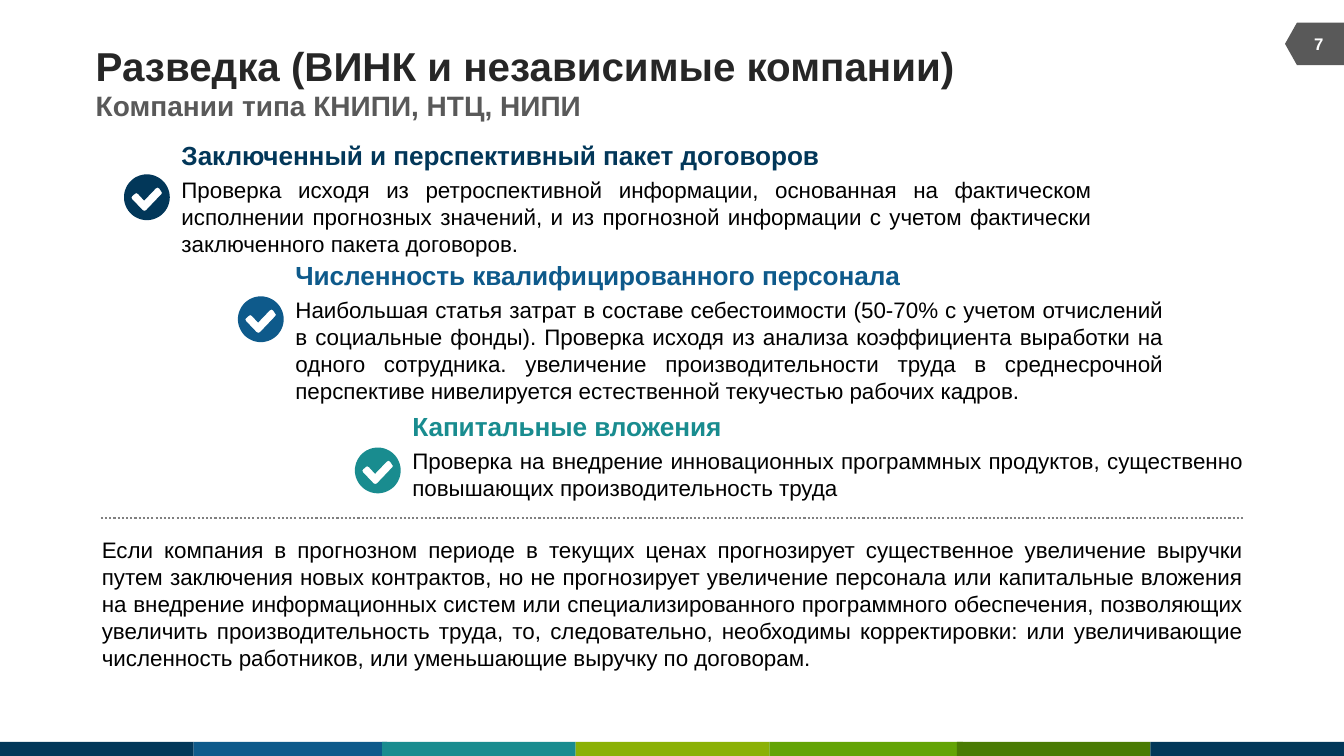
from math import cos, pi, sin

from lxml.etree import SubElement
from pptx import Presentation
from pptx.dml.color import RGBColor
from pptx.enum.dml import MSO_LINE
from pptx.enum.shapes import MSO_CONNECTOR, MSO_SHAPE
from pptx.enum.text import MSO_ANCHOR, PP_ALIGN
from pptx.oxml.ns import qn
from pptx.util import Pt

PX = 9144  # 100 px to the inch
ICON_UNIT = PX / 10
FONT = "Arial"
NAVY, BLUE, TEAL = "023759", "0E5A8B", "198C8F"
LIME, GREEN, DARK_GREEN = "8BB106", "63A406", "4A7B04"
GREY = "595959"

# Left edge and colour of each footer stripe
STRIPES = [(0, NAVY), (192, BLUE), (379, TEAL), (571, LIME),
           (763, GREEN), (949, DARK_GREEN), (1141, NAVY)]

# Colour, left, heading top, text width, text height, icon top, heading, text
FACTORS = [
    (NAVY, 180, 138, 903, 81, 173,
     "Заключенный и перспективный пакет договоров",
     "Проверка исходя из ретроспективной информации, основанная на "
     "фактическом исполнении прогнозных значений, и из прогнозной информации "
     "с учетом фактически заключенного пакета договоров."),
    (BLUE, 293, 257, 861, 108, 294,
     "Численность квалифицированного персонала",
     "Наибольшая статья затрат в составе себестоимости (50-70% с учетом "
     "отчислений в социальные фонды). Проверка исходя из анализа "
     "коэффициента выработки на одного сотрудника. увеличение "
     "производительности труда в среднесрочной перспективе нивелируется "
     "естественной текучестью рабочих кадров."),
    (TEAL, 409, 407, 824, 54, 444,
     "Капитальные вложения",
     "Проверка на внедрение инновационных программных продуктов, "
     "существенно повышающих производительность труда"),
]

CONCLUSION = (
    "Если компания в прогнозном периоде в текущих ценах прогнозирует "
    "существенное увеличение выручки путем заключения новых контрактов, но не "
    "прогнозирует увеличение персонала или капитальные вложения на внедрение "
    "информационных систем или специализированного программного обеспечения, "
    "позволяющих увеличить производительность труда, то, следовательно, "
    "необходимы корректировки: или увеличивающие численность работников, или "
    "уменьшающие выручку по договорам.")

# Check mark outline, in tenths of a px from the icon's corner
CHECK_MARK = [(370, 170), (350, 140), (332, 130), (315, 140), (200, 260),
              (140, 195), (122, 185), (105, 195), (80, 217), (74, 230),
              (80, 245), (185, 355), (203, 362), (220, 355), (370, 197),
              (378, 183)]
ICON_RADIUS = 227


def color(hex_value):
    return RGBColor.from_string(hex_value)


def paint(shape, fill):
    shape.fill.solid()
    shape.fill.fore_color.rgb = color(fill)
    shape.line.fill.background()
    shape.shadow.inherit = False


def add_block(slide, preset, left, top, width, height, fill):
    shape = slide.shapes.add_shape(
        preset, left * PX, top * PX, width * PX, height * PX)
    paint(shape, fill)
    return shape


def add_text(slide, left, top, width, height, text, size, fill="000000",
             bold=False, align=PP_ALIGN.LEFT, anchor=MSO_ANCHOR.TOP):
    box = slide.shapes.add_textbox(
        left * PX, top * PX, width * PX, height * PX)
    text_frame = box.text_frame
    text_frame.word_wrap = True
    text_frame.vertical_anchor = anchor
    text_frame.margin_left = text_frame.margin_right = 0
    text_frame.margin_top = text_frame.margin_bottom = 0
    text_frame.text = text
    paragraph = text_frame.paragraphs[0]
    paragraph.alignment = align
    font = paragraph.runs[0].font
    font.name, font.size, font.bold = FONT, Pt(size), bold
    font.color.rgb = color(fill)


def add_check_icon(slide, left, top, fill):
    steps = 60
    circle = [(ICON_RADIUS * (1 + cos(2 * pi * step / steps)),
               ICON_RADIUS * (1 + sin(2 * pi * step / steps)))
              for step in range(steps)]
    builder = slide.shapes.build_freeform(*circle[0], scale=ICON_UNIT)
    builder.add_line_segments(circle[1:], close=True)
    # The check mark is a hole in the disc
    builder.move_to(*CHECK_MARK[0])
    builder.add_line_segments(CHECK_MARK[1:], close=True)
    icon = builder.convert_to_shape()
    icon.left, icon.top = left * PX, top * PX
    paint(icon, fill)


def add_dotted_line(slide, left, right, top):
    line = slide.shapes.add_connector(
        MSO_CONNECTOR.STRAIGHT, left * PX, top * PX, right * PX, top * PX)
    line.line.color.rgb = color("808080")
    line.line.width = Pt(1.5)
    line.line.dash_style = MSO_LINE.ROUND_DOT
    SubElement(line._element.spPr, qn("a:effectLst"))


def add_factor(slide, fill, left, top, width, height, icon_top, heading, text):
    add_text(slide, left, top, 800, 31, heading, 18.67, fill, bold=True)
    add_text(slide, left, top + 37, width, height, text, 16,
             align=PP_ALIGN.JUSTIFY)
    add_check_icon(slide, left - 57, icon_top, fill)


def main():
    presentation = Presentation()
    presentation.slide_width = 1333 * PX
    presentation.slide_height = 750 * PX
    slide = presentation.slides.add_slide(presentation.slide_layouts[6])

    # Footer stripes
    for left, fill in STRIPES:
        add_block(slide, MSO_SHAPE.RECTANGLE, left, 736, 192, 14, fill)

    # Page number tag
    tag = add_block(slide, MSO_SHAPE.FLOWCHART_OFFPAGE_CONNECTOR,
                    1283, 14, 42, 59, GREY)
    tag.rotation = 90
    add_text(slide, 1283, 22, 50, 42, "7", 12, "FFFFFF", bold=True,
             align=PP_ALIGN.CENTER, anchor=MSO_ANCHOR.MIDDLE)

    # Title and subtitle
    add_text(slide, 95, 39, 934, 52, "Разведка (ВИНК и независимые компании)",
             28.8, "262626", bold=True, anchor=MSO_ANCHOR.MIDDLE)
    add_text(slide, 95, 90, 600, 29, "Компании типа КНИПИ, НТЦ, НИПИ",
             20, GREY, bold=True, anchor=MSO_ANCHOR.MIDDLE)

    # Factors to check
    for factor in FACTORS:
        add_factor(slide, *factor)

    # Conclusion
    add_dotted_line(slide, 100, 1233, 514)
    add_text(slide, 101, 532, 1132, 135, CONCLUSION, 16,
             align=PP_ALIGN.JUSTIFY)

    presentation.save("out.pptx")


if __name__ == "__main__":
    main()
